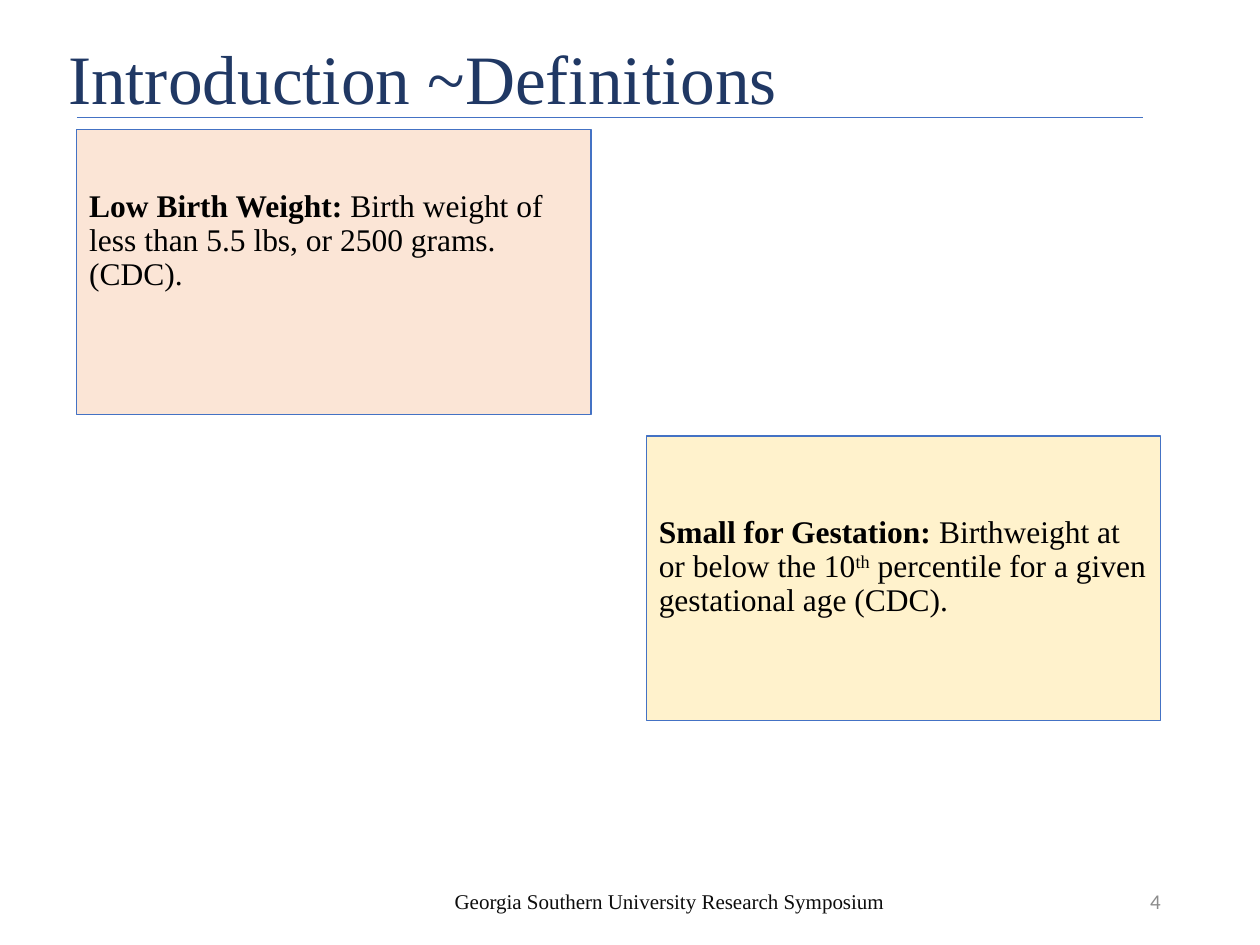
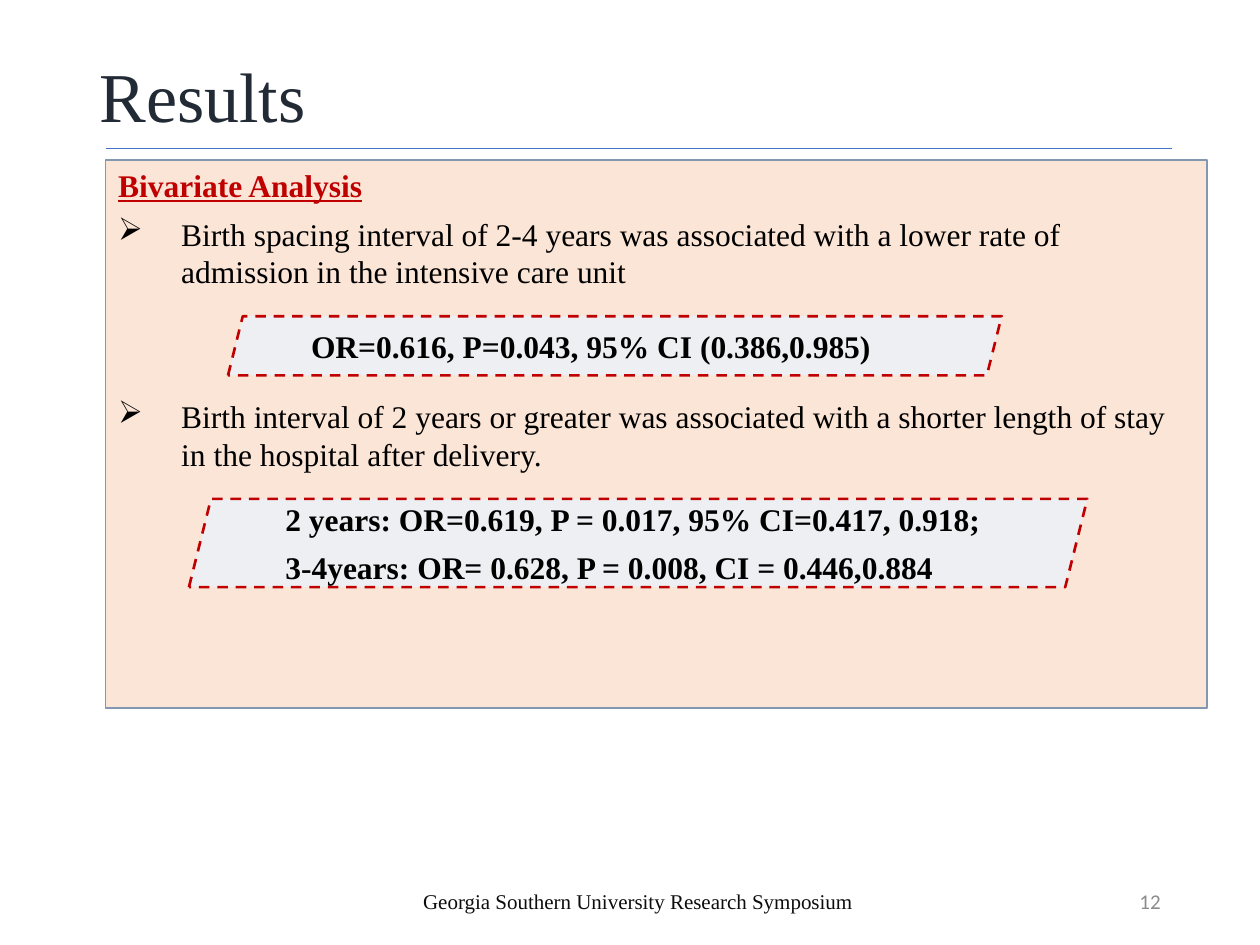
from lxml import etree
from pptx import Presentation
from pptx.dml.color import RGBColor
from pptx.enum import dml, shapes, text
from pptx.oxml import ns
from pptx.util import Inches, Pt

SERIF = "Times New Roman"
SANS = "Calibri"
FOOTER = "Georgia Southern University Research Symposium"
COLOURS = {
    "navy": "203864",
    "slate": "222A35",
    "black": "000000",
    "footer": "0D0D0D",
    "number": "8C8C8C",
    "red": "C00000",
    "blue": "4472C4",
    "steel": "8497B0",
    "peach": "FBE5D6",
    "cream": "FFF2CC",
    "mist": "EDEFF3",
}


def colour(name):
    """Return the named colour."""
    return RGBColor.from_string(COLOURS[name])


def add_span(para, words, size=18, shade="black", font=SERIF, bold=False):
    """Add one formatted run to a paragraph and return it."""
    span = para.add_run()
    span.text = words
    span.font.size = Pt(size)
    span.font.name = font
    span.font.bold = bold
    span.font.color.rgb = colour(shade)
    return span


def add_para(frame, first=False, before=3, after=3):
    """Return a left-aligned paragraph with its spacing set."""
    para = frame.paragraphs[0] if first else frame.add_paragraph()
    para.alignment = text.PP_ALIGN.LEFT
    para.space_before = Pt(before)
    para.space_after = Pt(after)
    return para


def add_bullet(para, mark="➢", indent=0.5):
    """Give a paragraph a hanging bullet."""
    properties = para._p.get_or_add_pPr()
    properties.set("marL", str(Inches(indent)))
    properties.set("indent", str(-Inches(indent)))
    bullet = etree.SubElement(properties, ns.qn("a:buChar"))
    bullet.set("char", mark)


def add_panel(page, box, fill, line, kind=shapes.MSO_SHAPE.RECTANGLE, width=0.75):
    """Draw a filled, outlined shape and return it."""
    panel = page.shapes.add_shape(kind, *map(Inches, box))
    panel.shadow.inherit = False
    panel.fill.solid()
    panel.fill.fore_color.rgb = colour(fill)
    panel.line.color.rgb = colour(line)
    panel.line.width = Pt(width)
    panel.text_frame.word_wrap = True
    panel.text_frame.vertical_anchor = text.MSO_ANCHOR.TOP
    return panel


def add_title(page, box, words, size, shade):
    """Place and format the title placeholder."""
    title = page.shapes.title
    title.left, title.top, title.width, title.height = map(Inches, box)
    frame = title.text_frame
    frame.auto_size = text.MSO_AUTO_SIZE.NONE
    frame.vertical_anchor = text.MSO_ANCHOR.MIDDLE
    para = add_para(frame, first=True, before=0, after=0)
    para.line_spacing = 0.9
    add_span(para, words, size, shade)


def add_rule(page, left, top, width=8.46):
    """Draw the thin line under the title."""
    rule = page.shapes.add_connector(
        shapes.MSO_CONNECTOR.STRAIGHT,
        Inches(left), Inches(top), Inches(left + width), Inches(top),
    )
    rule.line.color.rgb = colour("blue")
    rule.line.width = Pt(0.5)
    etree.SubElement(rule._element.spPr, ns.qn("a:effectLst"))


def add_footer(page, left, number):
    """Add the event name and the page number at the foot."""
    center, right = text.PP_ALIGN.CENTER, text.PP_ALIGN.RIGHT
    for start, width, words, align, shade, font in (
        (left, 4.01, FOOTER, center, "footer", SERIF),
        (7.06, 2.25, number, right, "number", SANS),
    ):
        area = page.shapes.add_textbox(
            Inches(start), Inches(6.95), Inches(width), Inches(0.4)
        )
        frame = area.text_frame
        frame.word_wrap = True
        frame.vertical_anchor = text.MSO_ANCHOR.MIDDLE
        para = frame.paragraphs[0]
        para.alignment = align
        add_span(para, words, 12, shade, font)


def add_definition(page, box, fill, inset, term, meaning):
    """Add a coloured card; meaning pairs words with a superscript flag."""
    card = add_panel(page, box, fill, "blue")
    frame = card.text_frame
    frame.margin_top = Inches(inset)
    para = add_para(frame, first=True, before=0, after=0)
    para.line_spacing = 0.9
    add_span(para, term, bold=True)
    for words, raised in meaning:
        span = add_span(para, words)
        if raised:
            span.font._element.set("baseline", "30000")


def add_findings(page, box, heading, findings):
    """Add the panel of findings, leaving room for a callout after each."""
    frame = add_panel(page, box, "peach", "steel").text_frame
    add_span(add_para(frame, first=True), heading, shade="red", bold=True).font.underline = True
    for index, finding in enumerate(findings):
        para = add_para(frame, before=58 if index else 3)
        add_bullet(para)
        add_span(para, finding)


def add_callout(page, box, lines):
    """Add a dashed parallelogram holding statistics."""
    callout = add_panel(
        page, box, "mist", "red", shapes.MSO_SHAPE.PARALLELOGRAM, 1.5
    )
    callout.line.dash_style = dml.MSO_LINE.DASH
    frame = callout.text_frame
    frame.vertical_anchor = text.MSO_ANCHOR.MIDDLE
    for index, words in enumerate(lines):
        add_span(add_para(frame, first=index == 0), words, bold=True)


def build_definitions(page):
    """Build the definitions slide."""
    add_title(page, (0.44, 0.3, 8.62, 0.71), "Introduction ~Definitions", 39.6, "navy")
    add_rule(page, 0.61, 0.93)
    add_definition(
        page, (0.61, 1.03, 4.08, 2.26), "peach", 0.48, "Low Birth Weight: ",
        [("Birth weight of less than 5.5 lbs, or 2500 grams. (CDC).", False)],
    )
    add_definition(
        page, (5.13, 3.46, 4.08, 2.26), "cream", 0.64, "Small for Gestation: ",
        [
            ("Birthweight at or below the 10", False),
            ("th", True),
            (" percentile for a given gestational age (CDC).", False),
        ],
    )
    add_footer(page, 3.31, "4")


def build_results(page):
    """Build the results slide."""
    add_title(page, (0.69, 0.4, 8.62, 0.78), "Results", 40, "slate")
    add_findings(
        page, (0.84, 1.27, 8.74, 4.35), "Bivariate Analysis",
        [
            "Birth spacing interval of 2-4 years was associated with a lower "
            "rate of admission in the intensive care unit",
            "Birth interval of 2 years or greater was associated with a shorter "
            "length of stay in the hospital after delivery.",
        ],
    )
    add_rule(page, 0.84, 1.18)
    add_callout(
        page, (1.81, 2.51, 6.14, 0.47), ["OR=0.616, P=0.043, 95% CI (0.386,0.985)"]
    )
    add_callout(
        page, (1.5, 3.96, 7.13, 0.7),
        [
            "2 years: OR=0.619, P = 0.017, 95% CI=0.417, 0.918;",
            "3-4years: OR= 0.628, P = 0.008, CI = 0.446,0.884",
        ],
    )
    add_footer(page, 3.06, "12")


def main():
    """Build and save the deck."""
    deck = Presentation()
    deck.slide_width, deck.slide_height = Inches(10), Inches(7.5)
    for build in (build_definitions, build_results):
        build(deck.slides.add_slide(deck.slide_layouts[5]))
    deck.save("out.pptx")


if __name__ == "__main__":
    main()
